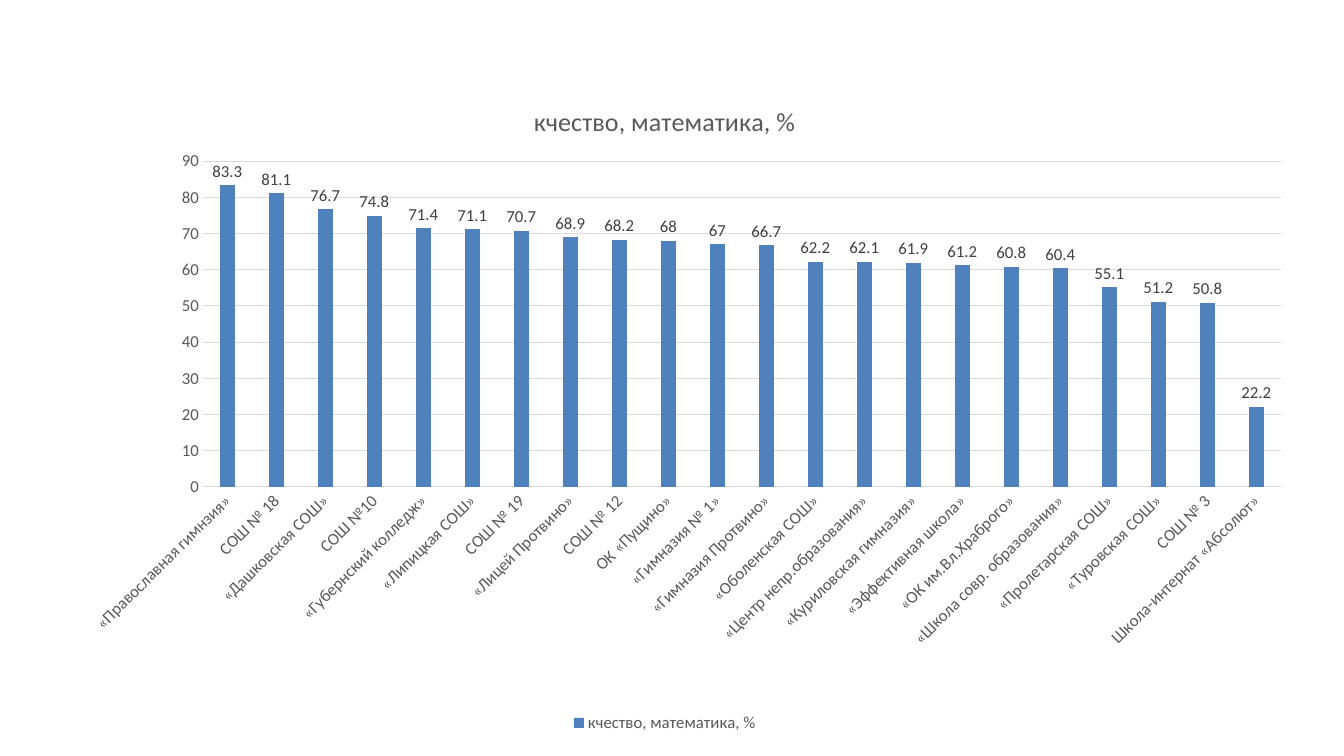
from pptx import Presentation
from pptx.chart.data import CategoryChartData
from pptx.dml.color import RGBColor
from pptx.enum.chart import (XL_CHART_TYPE, XL_LABEL_POSITION,
                             XL_LEGEND_POSITION, XL_TICK_MARK)
from pptx.oxml import parse_xml
from pptx.oxml.ns import nsdecls
from pptx.util import Pt

# Content
TITLE = "кчество, математика, %"
SCORES = [
    ("«Православная гимнзия»", 83.3),
    ("СОШ № 18", 81.1),
    ("«Дашковская СОШ»", 76.7),
    ("СОШ №10", 74.8),
    ("«Губернский колледж»", 71.4),
    ("«Липицкая СОШ»", 71.1),
    ("СОШ № 19", 70.7),
    ("«Лицей Протвино»", 68.9),
    ("СОШ № 12", 68.2),
    ("ОК «Пущино»", 68),
    ("«Гимназия № 1»", 67),
    ("«Гимназия Протвино»", 66.7),
    ("«Оболенская СОШ»", 62.2),
    ("«Центр непр.образования»", 62.1),
    ("«Куриловская гимназия»", 61.9),
    ("«Эффективная школа»", 61.2),
    ("«ОК им.Вл.Храброго»", 60.8),
    ("«Школа совр. образования»", 60.4),
    ("«Пролетарская СОШ»", 55.1),
    ("«Туровская СОШ»", 51.2),
    ("СОШ № 3", 50.8),
    ("Школа-интернат «Абсолют»", 22.2),
]
COLORS = {"bar": "4F81BD", "text": "595959", "label": "404040",
          "grid": "D9D9D9", "base": "000000"}
FONT = "Calibri"

# Chart frame on the slide, and plot area within the chart, in points
LEFT, TOP, WIDTH, HEIGHT = 30.24, 56.88, 889.2, 469.44
PLOT = {"x": 114.7, "y": 58.2, "w": 770, "h": 232.8}


def color(name):
    return RGBColor.from_string(COLORS[name])


def style(font, size, name="text"):
    font.name = FONT
    font.size = Pt(size)
    font.bold = False
    font.color.rgb = color(name)


def rule(line):
    line.width = Pt(0.75)
    line.color.rgb = color("grid")


# Slide
deck = Presentation()
deck.slide_width, deck.slide_height = Pt(960), Pt(540)
slide = deck.slides.add_slide(deck.slide_layouts[6])

# Chart
data = CategoryChartData()
data.categories = [school for school, score in SCORES]
data.add_series(TITLE, [score for school, score in SCORES])
chart = slide.shapes.add_chart(XL_CHART_TYPE.COLUMN_CLUSTERED, Pt(LEFT),
                               Pt(TOP), Pt(WIDTH), Pt(HEIGHT), data).chart
style(chart.font, 10, "base")

# Title and legend
chart.has_title = True
frame = chart.chart_title.text_frame
frame.text = TITLE
style(frame.paragraphs[0].font, 18.6)
chart.has_legend = True
chart.legend.position = XL_LEGEND_POSITION.BOTTOM
chart.legend.include_in_layout = False
style(chart.legend.font, 12)

# Axes
schools, scale = chart.category_axis, chart.value_axis
for axis in (schools, scale):
    axis.major_tick_mark = axis.minor_tick_mark = XL_TICK_MARK.NONE
    style(axis.tick_labels.font, 12)
rule(schools.format.line)
scale.format.line.fill.background()
scale.has_major_gridlines = True
rule(scale.major_gridlines.format.line)
scale.minimum_scale, scale.maximum_scale, scale.major_unit = 0, 90, 10
slant = chart.element.xpath(".//c:catAx/c:txPr/a:bodyPr")[0]
slant.set("rot", "-2700000")
slant.set("vert", "horz")

# Bars and value labels
plot = chart.plots[0]
plot.gap_width, plot.overlap = 219, -27
plot.vary_by_categories = False
bars = plot.series[0]
bars.format.fill.solid()
bars.format.fill.fore_color.rgb = color("bar")
labels = bars.data_labels
labels.show_value = True
labels.position = XL_LABEL_POSITION.OUTSIDE_END
style(labels.font, 12, "label")

# Plot area, as shares of the chart
area = chart.element.xpath(".//c:plotArea")[0]
for old in area.xpath("./c:layout"):
    area.remove(old)
whole = {"x": WIDTH, "y": HEIGHT, "w": WIDTH, "h": HEIGHT}
modes = "".join(f'<c:{key}Mode val="edge"/>' for key in "xy")
sizes = "".join(f'<c:{key} val="{PLOT[key] / whole[key]:.4f}"/>'
                for key in PLOT)
area.insert(0, parse_xml(
    f'<c:layout {nsdecls("c")}><c:manualLayout><c:layoutTarget val="inner"/>'
    f'{modes}{sizes}</c:manualLayout></c:layout>'))

deck.save("out.pptx")
